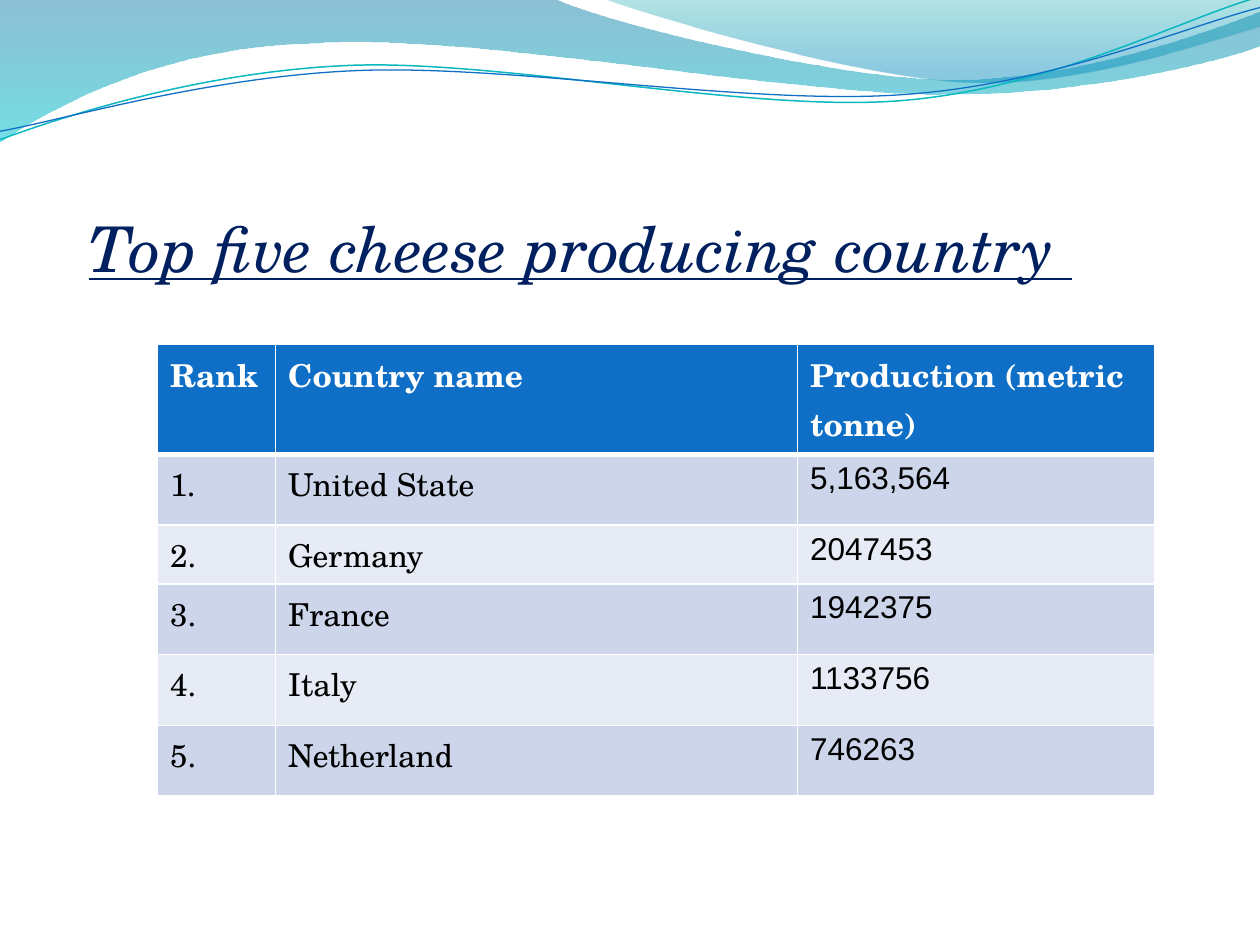
from dataclasses import dataclass

from lxml.etree import SubElement
from pptx import Presentation
from pptx.dml.color import RGBColor
from pptx.enum.text import MSO_ANCHOR, MSO_AUTO_SIZE, PP_ALIGN
from pptx.oxml import parse_xml
from pptx.oxml.ns import nsdecls, qn
from pptx.util import Pt

SERIF = "TeX Gyre Schola"
SANS = "Arial"
BLUE = "0F6FC6"
WHITE = "FFFFFF"
BANDS = ("CCD5EA", "E7EBF5")

Point = tuple[float, float]
# A segment of one point is a straight line; one of three points is a Bezier curve.
Segment = tuple[Point, ...]


@dataclass
class Stop:
    position: float
    color: str
    opacity: int


@dataclass
class Outline:
    start: Point
    segments: list[Segment]


@dataclass
class Wave:
    outline: Outline
    stops: tuple[Stop, Stop]


@dataclass
class Strand:
    outline: Outline
    color: str
    width: float


WAVES = [
    Wave(Outline((0, 0), [
        ((316.8, -0.7),),
        ((342.7, 12.2), (478.1, 45.4), (545.8, 45.4)),
        ((614.2, 45.4), (689.8, 18.7), (720, 6.5)),
        ((720.7, 25.9),),
        ((707.8, 31.7), (626.4, 54.7), (537.1, 54)),
        ((447.8, 54), (275, 20.2), (185, 24.5)),
        ((92.9, 25.9), (33.1, 59.8), (-0.7, 81.4)),
        ((0, 0),),
    ]), (Stop(0, "0074A1", 45), Stop(1, "00C6CF", 55))),
    Wave(Outline((344.9, -0.7), [
        ((366.5, 7.9), (491, 44.6), (553.7, 46.8)),
        ((616.3, 49.7), (691.9, 23), (720, 15.1)),
        ((720, 0),),
        ((344.9, -0.7),),
    ]), (Stop(0, "00A1A9", 30), Stop(0.8, "008BBF", 45))),
]
STRAND_ROTATION = 357.3
STRANDS = [
    Strand(Outline((-1.4, 62.9), [
        ((33.8, 51.7), (114.1, 29.4), (199.8, 29.9)),
        ((284.9, 30.3), (425.8, 67.3), (512.4, 64.9)),
        ((599, 62.4), (676.4, 25.7), (720.2, 15.5)),
    ]), "0AB8BF", 0.85),
    Strand(Outline((-1.1, 58), [
        ((32.9, 53.8), (118.3, 32.5), (204.1, 33)),
        ((290.6, 33.4), (428.9, 63.8), (515.5, 61.4)),
        ((601.3, 59.6), (678.4, 30.1), (721.4, 21.3)),
    ]), BLUE, 0.75),
]

HEADER = ("Rank", "Country name", "Production (metric tonne)")
COUNTRIES = [
    ("United State", "5,163,564"),
    ("Germany", "2047453"),
    ("France", "1942375"),
    ("Italy", "1133756"),
    ("Netherland", "746263"),
]
COLUMN_WIDTHS = (67.5, 298.2, 204.3)
ROW_HEIGHT = 40.4
SHORT_ROW, SHORT_HEIGHT = 2, 10.8


def rgb(color: str) -> RGBColor:
    return RGBColor.from_string(color)


def add_outline(slide, outline: Outline, close: bool):
    """Draw straight lines through all points, then bend every three into a curve."""
    points = [point for segment in outline.segments for point in segment]
    builder = slide.shapes.build_freeform(*map(Pt, outline.start))
    builder.add_line_segments([(Pt(x), Pt(y)) for x, y in points], close=close)
    shape = builder.convert_to_shape()
    shape.shadow.inherit = False
    lines = iter(list(shape.element.spPr.iter(qn("a:lnTo"))))
    for segment in outline.segments:
        parts = [next(lines) for _ in segment]
        if len(segment) == 3:
            curve = parse_xml(f'<a:cubicBezTo {nsdecls("a")}/>')
            parts[0].addprevious(curve)
            for part in parts:
                curve.append(part[0])
                part.getparent().remove(part)
    return shape


def add_wave(slide, wave: Wave) -> None:
    shape = add_outline(slide, wave.outline, close=True)
    shape.line.fill.background()
    shape.fill.gradient()
    shape.fill.gradient_angle = 270
    for gradient_stop, stop in zip(shape.fill.gradient_stops, wave.stops):
        gradient_stop.position = stop.position
        gradient_stop.color.rgb = rgb(stop.color)
    for color, stop in zip(shape.element.spPr.iter(qn("a:srgbClr")), wave.stops):
        SubElement(color, qn("a:alpha"), val=str(stop.opacity * 1000))


def add_strand(slide, strand: Strand) -> None:
    shape = add_outline(slide, strand.outline, close=False)
    shape.rotation = STRAND_ROTATION
    shape.fill.background()
    shape.line.color.rgb = rgb(strand.color)
    shape.line.width = Pt(strand.width)


def format_title(title) -> None:
    title.left, title.top, title.width, title.height = Pt(50.7), Pt(84.4), Pt(639.4), Pt(78.5)
    frame = title.text_frame
    frame.text = "Top five cheese producing country "
    frame.auto_size = MSO_AUTO_SIZE.NONE
    frame.vertical_anchor = MSO_ANCHOR.BOTTOM
    frame.margin_left = frame.margin_right = frame.margin_bottom = 0
    frame.margin_top = Pt(3.6)
    paragraph = frame.paragraphs[0]
    paragraph.alignment = PP_ALIGN.LEFT
    font = paragraph.runs[0].font
    font.name, font.size = SERIF, Pt(36)
    font.italic = font.underline = True
    font.color.rgb = rgb("002060")
    title.element.getparent().append(title.element)  # in front of the waves


def set_borders(cell, top: float, bottom: float) -> None:
    properties = cell._tc.get_or_add_tcPr()
    for index, (side, width) in enumerate((("L", 1), ("R", 1), ("T", top), ("B", bottom))):
        properties.insert(index, parse_xml(
            f'<a:ln{side} {nsdecls("a")} w="{Pt(width)}"><a:solidFill>'
            f'<a:srgbClr val="{WHITE}"/></a:solidFill></a:ln{side}>'))


def fill_cell(cell, text: str, row: int, column: int) -> None:
    is_header = row == 0
    cell.text_frame.text = text
    font = cell.text_frame.paragraphs[0].runs[0].font
    font.name = SANS if column == 2 and not is_header else SERIF
    font.size = Pt(18)
    font.bold = is_header
    font.color.rgb = rgb(WHITE if is_header else "000000")
    cell.fill.solid()
    cell.fill.fore_color.rgb = rgb(BLUE if is_header else BANDS[(row - 1) % 2])
    set_borders(cell, top=3 if row == 1 else 1, bottom=3 if is_header else 1)


def add_country_table(slide) -> None:
    rows = [HEADER] + [(f"{rank}.", *country) for rank, country in enumerate(COUNTRIES, 1)]
    heights = [SHORT_HEIGHT if row == SHORT_ROW else ROW_HEIGHT for row in range(len(rows))]
    frame = slide.shapes.add_table(len(rows), len(HEADER), Pt(90), Pt(196.8),
                                   Pt(sum(COLUMN_WIDTHS)), Pt(sum(heights)))
    table = frame.table
    for column, width in zip(table.columns, COLUMN_WIDTHS):
        column.width = Pt(width)
    for row_index, (values, height) in enumerate(zip(rows, heights)):
        table.rows[row_index].height = Pt(height)
        for column_index, text in enumerate(values):
            fill_cell(table.cell(row_index, column_index), text, row_index, column_index)
    frame.height = Pt(240.5)


def main() -> None:
    presentation = Presentation()
    presentation.slide_width, presentation.slide_height = Pt(720), Pt(540)
    slide = presentation.slides.add_slide(presentation.slide_layouts[5])
    for wave in WAVES:
        add_wave(slide, wave)
    for strand in STRANDS:
        add_strand(slide, strand)
    format_title(slide.shapes.title)
    add_country_table(slide)
    presentation.save("out.pptx")


if __name__ == "__main__":
    main()
